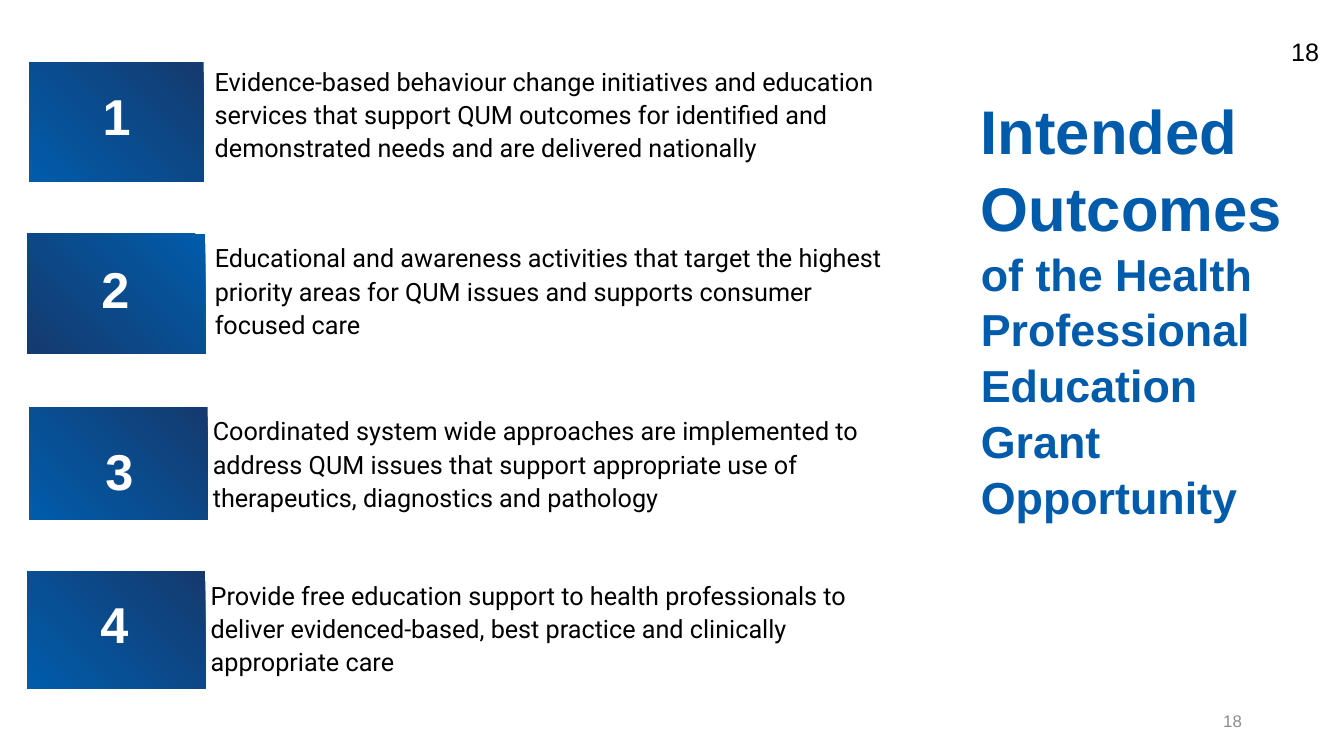
from dataclasses import dataclass
from typing import NamedTuple

import pptx
import pptx.dml.color
import pptx.enum.shapes
import pptx.enum.text
import pptx.util

Pt = pptx.util.Pt
Align = pptx.enum.text.PP_ALIGN
Anchor = pptx.enum.text.MSO_ANCHOR

COLOURS = {
    "title": "005BAB",
    "bright": "005CAB",
    "navy": "153A6E",
    "white": "FFFFFF",
    "black": "000000",
    "grey": "8C8C8C",
}


class Area(NamedTuple):
    left: float
    top: float
    width: float
    height: float


class Insets(NamedTuple):
    left: float
    top: float
    right: float
    bottom: float


@dataclass
class Style:
    font: str
    size: float
    colour: str
    bold: bool = False
    align: Align = Align.LEFT
    anchor: Anchor = Anchor.TOP
    insets: Insets = Insets(7.2, 3.6, 7.2, 3.6)
    line_spacing: float | pptx.util.Length = 1.0
    tracking: float = 0


@dataclass
class Outcome:
    number: str
    wording: str
    tile: Area
    number_area: Area
    wording_area: Area
    gradient: tuple[str, str] = ("navy", "bright")


NUMBER = Style("Arial", 36, "white", True, Align.CENTER, Anchor.BOTTOM,
               Insets(2.2, 0, 2.2, 14.4), Pt(68), -2.1)
WORDING = Style("Roboto", 18, "black", anchor=Anchor.MIDDLE,
                insets=Insets(2.2, 2.2, 2.2, 2.2), line_spacing=1.1)
FOOTER_NUMBER = Style("Arial", 12, "grey", align=Align.RIGHT, anchor=Anchor.MIDDLE)
CORNER_NUMBER = Style("Arial", 18, "black")
TITLE = Style("Arial", 44, "title", True, insets=Insets(2.2, 3.6, 2.2, 3.6),
              line_spacing=1.04)

OUTCOMES = [
    Outcome(
        "1",
        "Evidence-based behaviour change initiatives and education services that "
        "support QUM outcomes for identified and demonstrated needs and are "
        "delivered nationally",
        Area(20.9, 44.6, 124.6, 85),
        Area(31, 69.1, 104.4, 49),
        Area(151.2, 43.9, 504, 73.4),
    ),
    Outcome(
        "2",
        "Educational and awareness activities that target the highest priority "
        "areas for QUM issues and supports consumer focused care",
        Area(19.4, 167, 127.4, 85.7),
        Area(27.4, 192.2, 110.2, 49.7),
        Area(151.2, 171.4, 491, 70.6),
        ("bright", "navy"),
    ),
    Outcome(
        "3",
        "Coordinated system wide approaches are implemented to address QUM issues "
        "that support appropriate use of therapeutics, diagnostics and pathology",
        Area(20.9, 290.9, 127.4, 79.9),
        Area(30.2, 301, 110.2, 70.6),
        Area(149.8, 300.2, 494.6, 60.5),
    ),
    Outcome(
        "4",
        "Provide free education support to health professionals to deliver "
        "evidenced-based, best practice and clinically appropriate care",
        Area(19.4, 408.2, 127.4, 83.5),
        Area(26.6, 422.6, 110.2, 58.3),
        Area(148.3, 414.7, 494.6, 66.2),
    ),
]


def colour(name: str) -> pptx.dml.color.RGBColor:
    return pptx.dml.color.RGBColor.from_string(COLOURS[name])


def points(area: Area) -> list[pptx.util.Length]:
    return [Pt(length) for length in area]


def format_text(frame, style: Style) -> None:
    frame.word_wrap = True
    frame.auto_size = pptx.enum.text.MSO_AUTO_SIZE.NONE
    frame.vertical_anchor = style.anchor
    for side, inset in style.insets._asdict().items():
        setattr(frame, f"margin_{side}", Pt(inset))
    para = frame.paragraphs[0]
    para.alignment = style.align
    para.line_spacing = style.line_spacing
    para.font.name = style.font
    para.font.size = Pt(style.size)
    para.font.bold = style.bold
    para.font.color.rgb = colour(style.colour)


def add_text(page, text: str, area: Area, style: Style) -> None:
    frame = page.shapes.add_textbox(*points(area)).text_frame
    span = frame.paragraphs[0].add_run()
    span.text = text
    if style.tracking:
        span._r.get_or_add_rPr().set("spc", str(round(style.tracking * 100)))
    format_text(frame, style)


def add_tile(page, area: Area, gradient: tuple[str, str]) -> None:
    tile = page.shapes.add_shape(pptx.enum.shapes.MSO_SHAPE.RECTANGLE, *points(area))
    tile.shadow.inherit = False
    tile.line.fill.background()
    tile.fill.gradient()
    tile.fill.gradient_angle = 225
    for stop, name in zip(tile.fill.gradient_stops, gradient):
        stop.color.rgb = colour(name)


def add_outcome(page, outcome: Outcome) -> None:
    add_tile(page, outcome.tile, outcome.gradient)
    add_text(page, outcome.wording, outcome.wording_area, WORDING)
    add_text(page, outcome.number, outcome.number_area, NUMBER)


def set_title(page) -> None:
    title = page.shapes.title
    title.left, title.top, title.width, title.height = points(Area(698.4, 61, 237.6, 84.2))
    para = title.text_frame.paragraphs[0]
    para.add_run().text = "Intended Outcomes "
    subject = para.add_run()
    subject.text = "of the Health Professional Education Grant Opportunity"
    subject.font.size = Pt(32)
    format_text(title.text_frame, TITLE)


def main() -> None:
    deck = pptx.Presentation()
    deck.slide_width, deck.slide_height = Pt(960), Pt(540)
    page = deck.slides.add_slide(deck.slide_layouts[5])
    set_title(page)
    for outcome in OUTCOMES:
        add_outcome(page, outcome)
    add_text(page, "18", Area(678.2, 500.4, 216, 28.8), FOOTER_NUMBER)
    add_text(page, "18", Area(915.1, 22.3, 36, 28.8), CORNER_NUMBER)
    deck.save("out.pptx")


if __name__ == "__main__":
    main()
